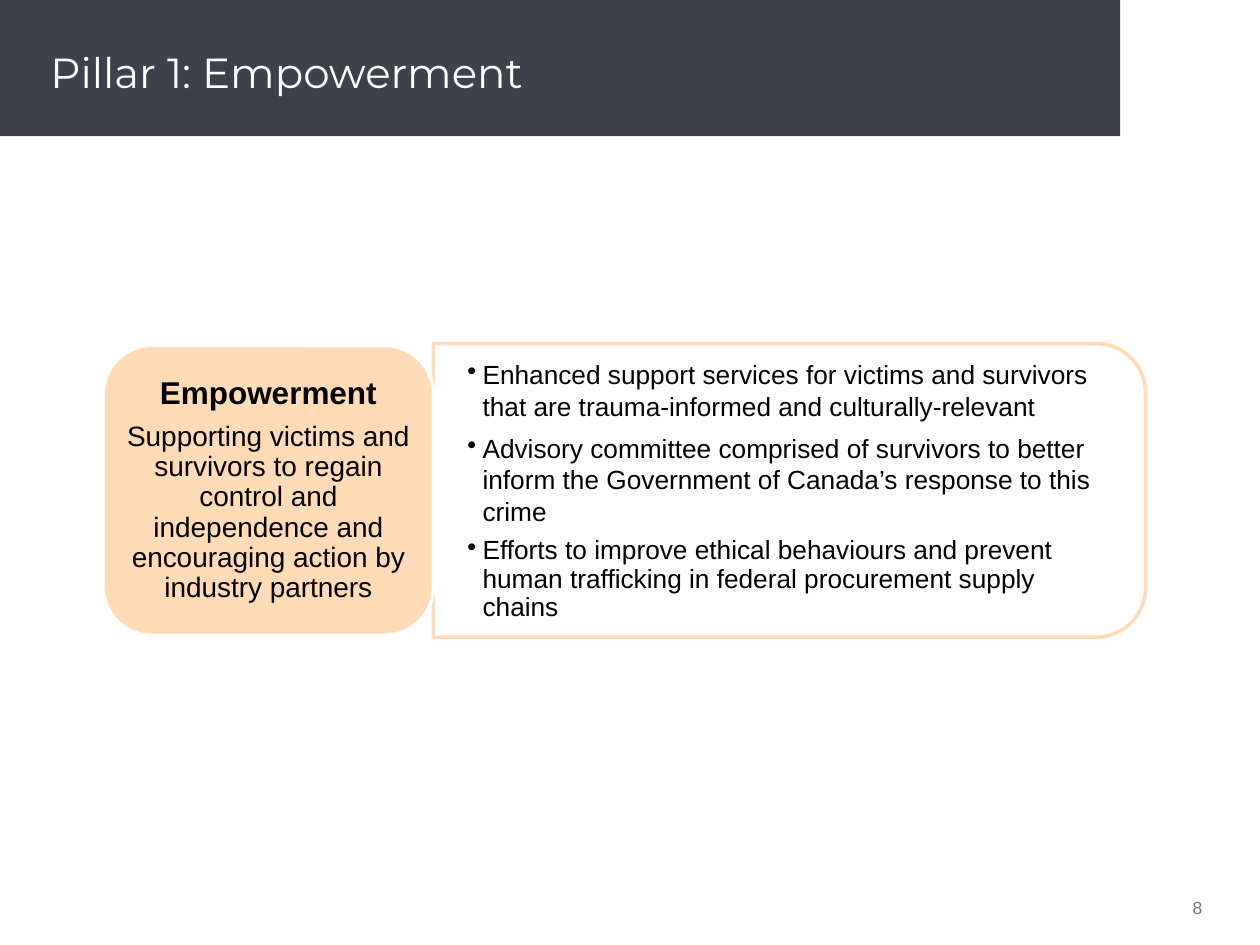
from lxml import etree
from pptx import Presentation
from pptx.dml.color import RGBColor
from pptx.enum.shapes import MSO_SHAPE
from pptx.enum.text import MSO_ANCHOR, PP_ALIGN
from pptx.oxml.ns import qn
from pptx.util import Inches, Pt

LEFT, CENTER, RIGHT = PP_ALIGN.LEFT, PP_ALIGN.CENTER, PP_ALIGN.RIGHT
TOP, MIDDLE = MSO_ANCHOR.TOP, MSO_ANCHOR.MIDDLE
RECTANGLE, ROUNDED = MSO_SHAPE.RECTANGLE, MSO_SHAPE.ROUNDED_RECTANGLE
TWO_ROUNDED = MSO_SHAPE.ROUND_2_SAME_RECTANGLE

WIDTH, HEIGHT = 10, 7.5
SLATE, PEACH, WHITE, BLACK, GREY = "3E414C", "FFDBB7", "FFFFFF", "000000", "777777"

MEASURES = [
    ("Enhanced support services for victims and survivors that are "
     "trauma-informed and culturally-relevant", 1, 6),
    ("Advisory committee comprised of survivors to better inform the "
     "Government of Canada’s response to this crime", 1, 6),
    ("Efforts to improve ethical behaviours and prevent human trafficking "
     "in federal procurement supply chains", 0.9, 2.25),
]


def color(value):
    return RGBColor.from_string(value)


def place(shape, box):
    shape.left, shape.top, shape.width, shape.height = map(Inches, box)


def add_shape(page, kind, box, fill=None, line=None):
    shape = page.shapes.add_shape(kind, *map(Inches, box))
    shape.shadow.inherit = False
    if fill:
        shape.fill.solid()
        shape.fill.fore_color.rgb = color(fill)
    else:
        shape.fill.background()
    if line:
        shape.line.color.rgb = color(line)
        shape.line.width = Pt(2)
    else:
        shape.line.fill.background()
    return shape


def set_frame(shape, anchor=MIDDLE, side=0.1, end=0.05):
    frame = shape.text_frame
    frame.word_wrap = True
    frame.vertical_anchor = anchor
    frame.margin_left = frame.margin_right = Inches(side)
    frame.margin_top = frame.margin_bottom = Inches(end)
    return frame


def add_bullet(para, indent):
    properties = para._p.get_or_add_pPr()
    properties.set("marL", str(Inches(indent)))
    properties.set("indent", str(-Inches(indent)))
    etree.SubElement(properties, qn("a:buChar"), char="•")


def write(frame, text, size, ink=BLACK, font="Arial", bold=False, align=LEFT,
          spacing=1, after=0, bullet=None):
    """Write into the first paragraph while it is empty, else into a new one."""
    para = frame.paragraphs[0]
    if para.runs:
        para = frame.add_paragraph()
    if bullet:
        add_bullet(para, bullet)
    para.alignment = align
    para.line_spacing = spacing
    para.space_before, para.space_after = Pt(0), Pt(after)
    span = para.add_run()
    span.text = text
    span.font.size, span.font.bold, span.font.name = Pt(size), bold, font
    span.font.color.rgb = color(ink)
    return span


def add_text_shadow(span):
    effects = etree.Element(qn("a:effectLst"))
    shadow = etree.SubElement(effects, qn("a:outerShdw"), blurRad="38100",
                              dist="38100", dir="2700000", algn="tl")
    etree.SubElement(shadow, qn("a:srgbClr"), val=BLACK)
    span.font.fill._xPr.find(qn("a:solidFill")).addnext(effects)


def build_header(page, box, text):
    left, top, width, height = box
    band = add_shape(page, RECTANGLE, box, fill=SLATE)
    page.shapes._spTree.insert(2, band._element)
    title = page.shapes.title
    place(title, (left + 0.3, top + 0.11, width + 0.11, height - 0.16))
    add_text_shadow(write(set_frame(title), text, 24, WHITE, "Montserrat"))


def build_measures(page, box):
    """Outline a panel with its right corners rounded, and list the measures."""
    left, top, width, height = box
    upright = (left + (width - height) / 2, top + (height - width) / 2, height, width)
    add_shape(page, TWO_ROUNDED, upright, line=PEACH).rotation = 90
    inset = 0.11
    area = (left, top + inset, width - inset, height - 2 * inset)
    frame = set_frame(page.shapes.add_textbox(*map(Inches, area)), side=0.27, end=0.14)
    for text, spacing, after in MEASURES:
        write(frame, text, 15, spacing=spacing, after=after, bullet=0.12)


def build_pillar(page, box, name, aim):
    card = add_shape(page, ROUNDED, box, fill=PEACH, line=WHITE)
    frame = set_frame(card, side=0.07, end=0.04)
    write(frame, name, 18, bold=True, align=CENTER, spacing=0.9, after=6.3)
    write(frame, aim, 16, align=CENTER, spacing=0.9, after=5.6)


def build_page_number(page, box, number):
    frame = set_frame(page.shapes.add_textbox(*map(Inches, box)), anchor=TOP)
    write(frame, number, 10, GREY, align=RIGHT)


def main():
    deck = Presentation()
    deck.slide_width, deck.slide_height = Inches(WIDTH), Inches(HEIGHT)
    page = deck.slides.add_slide(deck.slide_layouts[5])
    row_left, row_width, split = 0.082 * WIDTH, 8.27, 2.62
    middle = 0.519 * HEIGHT
    build_header(page, (0, 0, 0.889 * WIDTH, 0.144 * HEIGHT), "Pillar 1: Empowerment")
    build_measures(page, (row_left + split, middle - 1.165, row_width - split, 2.33))
    build_pillar(page, (row_left, middle - 1.15, split, 2.3), "Empowerment",
                 "Supporting victims and survivors to regain control and "
                 "independence and encouraging action by industry partners")
    build_page_number(page, (7.31, HEIGHT - 0.43, 2.33, 0.28), "8")
    deck.save("out.pptx")


if __name__ == "__main__":
    main()
